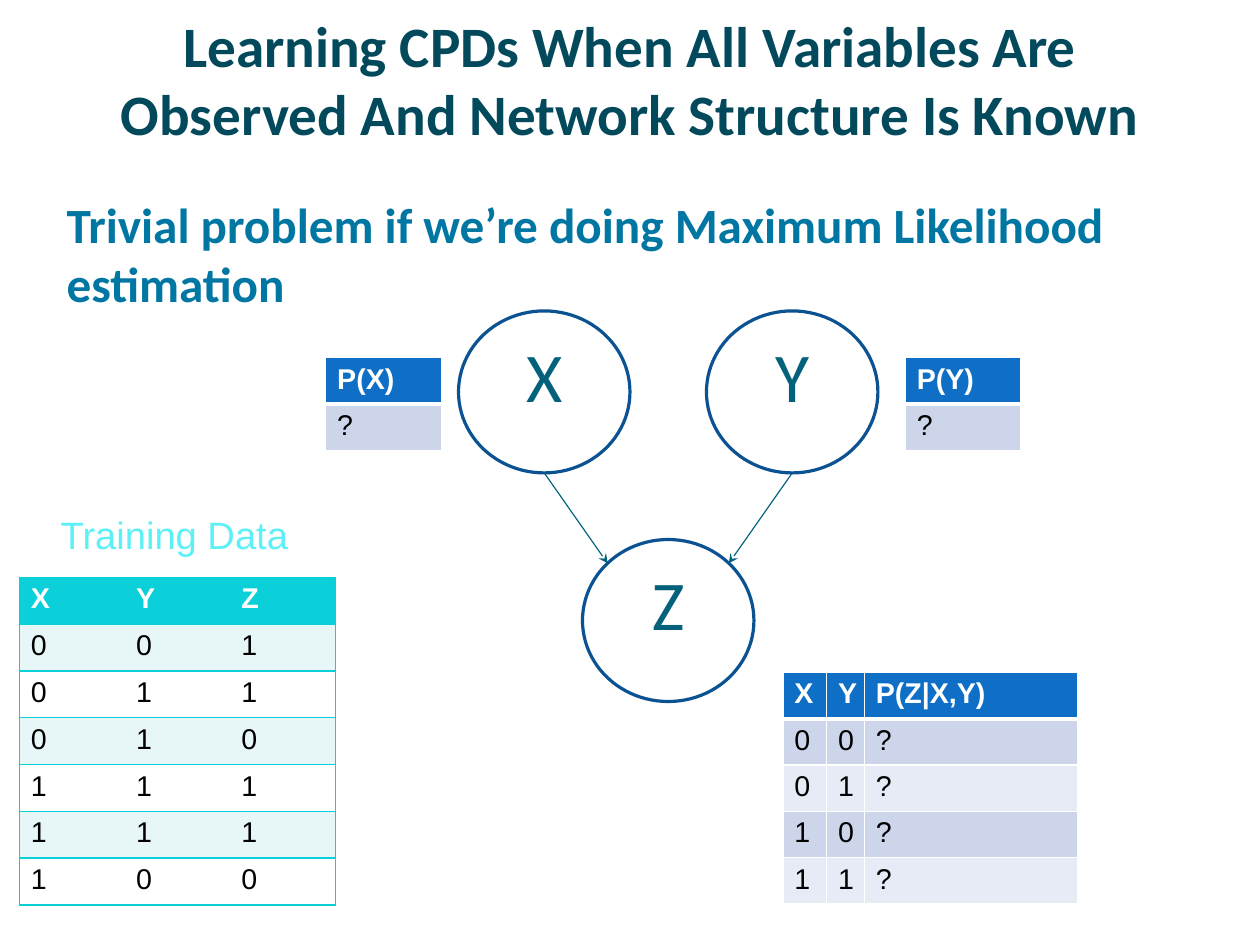
from lxml import etree
from pptx import Presentation
from pptx import util as u
from pptx.dml import color
from pptx.enum import shapes, text
from pptx.oxml import ns

WHITE, BLACK = "FFFFFF", "000000"
BLUE, AQUA, TEAL = "0F6FC6", "0BD0D9", "04617B"


def rgb(value):
    return color.RGBColor.from_string(value)


class NetworkSlide:
    def __init__(self, slide, heading_font, data_font):
        self.shapes = slide.shapes
        self.heading_font = heading_font
        self.data_font = data_font

    def style(self, paragraph, font, size, hue, bold=False):
        for run in paragraph.runs:
            run.font.name = font
            run.font.size = u.Pt(size)
            run.font.bold = bold
            run.font.color.rgb = rgb(hue)

    def label(self, words, box, font, size, hue, bold=False, align=text.PP_ALIGN.LEFT,
              anchor=text.MSO_ANCHOR.TOP, wrap=True, spacing=None):
        frame = self.shapes.add_textbox(*map(u.Cm, box)).text_frame
        frame.text = words
        frame.word_wrap = wrap
        frame.vertical_anchor = anchor
        paragraph = frame.paragraphs[0]
        paragraph.alignment = align
        paragraph.line_spacing = spacing
        self.style(paragraph, font, size, hue, bold)

    def node(self, name, left, top, width, height):
        circle = self.shapes.add_shape(shapes.MSO_SHAPE.OVAL, *map(u.Cm, (left, top, width, height)))
        circle.shadow.inherit = False
        circle.fill.solid()
        circle.fill.fore_color.rgb = rgb(WHITE)
        circle.line.color.rgb = rgb("0B5292")
        circle.line.width = u.Pt(2)
        frame = circle.text_frame
        frame.text = name
        frame.vertical_anchor = text.MSO_ANCHOR.MIDDLE
        paragraph = frame.paragraphs[0]
        paragraph.alignment = text.PP_ALIGN.CENTER
        paragraph.line_spacing = 0.41
        self.style(paragraph, self.heading_font, 44, TEAL)

    def arrow(self, *ends):
        edge = self.shapes.add_connector(shapes.MSO_CONNECTOR.STRAIGHT, *map(u.Cm, ends))
        edge.line.color.rgb = rgb(TEAL)
        edge.line.width = u.Pt(0.75)
        etree.SubElement(edge.line._get_or_add_ln(), ns.qn("a:tailEnd"), type="stealth")
        etree.SubElement(edge._element.spPr, ns.qn("a:effectLst"))

    def borders(self, cell, sides):
        properties = cell._tc.get_or_add_tcPr()
        for index, (side, (hue, width)) in enumerate(sides.items()):
            line = etree.Element(ns.qn(f"a:ln{side}"), w=str(u.Pt(width)))
            if hue:
                fill = etree.SubElement(line, ns.qn("a:solidFill"))
                etree.SubElement(fill, ns.qn("a:srgbClr"), val=hue)
            else:
                etree.SubElement(line, ns.qn("a:noFill"))
            properties.insert(index, line)

    def table(self, rows, left, top, widths, row_height, header, bands, rule,
              header_rule=1, inner_columns=True):
        frame = self.shapes.add_table(
            len(rows), len(widths), u.Cm(left), u.Cm(top),
            u.Cm(sum(widths)), u.Cm(row_height * len(rows)))
        grid = frame.table
        grid.horz_banding = False
        for column, width in zip(grid.columns, widths):
            column.width = u.Cm(width)
        last = len(widths) - 1
        for r, values in enumerate(rows):
            grid.rows[r].height = u.Cm(row_height)
            for c, value in enumerate(values):
                cell = grid.cell(r, c)
                cell.text = value
                cell.fill.solid()
                cell.fill.fore_color.rgb = rgb(bands[(r - 1) % 2] if r else header)
                self.style(cell.text_frame.paragraphs[0], self.data_font, 18,
                           BLACK if r else WHITE, r == 0)
                self.borders(cell, {
                    "L": (rule if inner_columns or c == 0 else None, 1),
                    "R": (rule if inner_columns or c == last else None, 1),
                    "T": (rule, header_rule if r == 1 else 1),
                    "B": (rule, header_rule if r == 0 else 1)})


def main():
    deck = Presentation()
    deck.slide_width, deck.slide_height = u.Cm(28), u.Cm(21)
    page = NetworkSlide(deck.slides.add_slide(deck.slide_layouts[6]), "Calibri", "Arial")

    page.label("Learning CPDs When All Variables Are Observed And Network Structure Is Known",
               (1.4, 0.46, 25.2, 2.57), page.heading_font, 36, "03495C", True,
               text.PP_ALIGN.CENTER, text.MSO_ANCHOR.MIDDLE)
    page.label("Trivial problem if we’re doing Maximum Likelihood estimation",
               (1.23, 4.2, 25.4, 2.8), page.heading_font, 31, "0076A3", True)

    width, height = 3.81, 3.6
    x_left, y_left, parent_top, z_top = 10.19, 15.7, 6.91, 11.99
    z_left = (x_left + y_left) / 2
    for name, left, top in (("X", x_left, parent_top), ("Y", y_left, parent_top),
                            ("Z", z_left, z_top)):
        page.node(name, left, top, width, height)

    diagonal = 0.5 ** 0.5
    z_middle = z_left + width / 2
    for parent_left, side in ((x_left, -1), (y_left, 1)):
        page.arrow(parent_left + width / 2, parent_top + height,
                   z_middle + side * diagonal * width / 2,
                   z_top + (1 - diagonal) * height / 2)

    blue_style = dict(header=BLUE, bands=("CCD5EA", "E7EBF5"), rule=WHITE, header_rule=3)
    page.table(("X Y P(Z|X,Y)".split(), "00?", "01?", "10?", "11?"),
               17.4, 14.94, (0.97, 0.84, 4.74), 1.03, **blue_style)
    for heading, left in (("P(X)", 7.24), ("P(Y)", 20.12)):
        page.table(([heading], "?"), left, 7.95, (2.57,), 1.03, **blue_style)

    page.table(("XYZ", "001", "011", "010", "111", "111", "100"),
               0.43, 12.83, (2.34,) * 3, 1.04, header=AQUA, bands=("E7F7F8", WHITE),
               rule=AQUA, inner_columns=False)
    page.label("Training Data", (1.1, 11.76, 5.61, 0.79), page.data_font, 24, "5EF0F7",
               wrap=False, spacing=0.41)

    deck.save("out.pptx")


if __name__ == "__main__":
    main()
